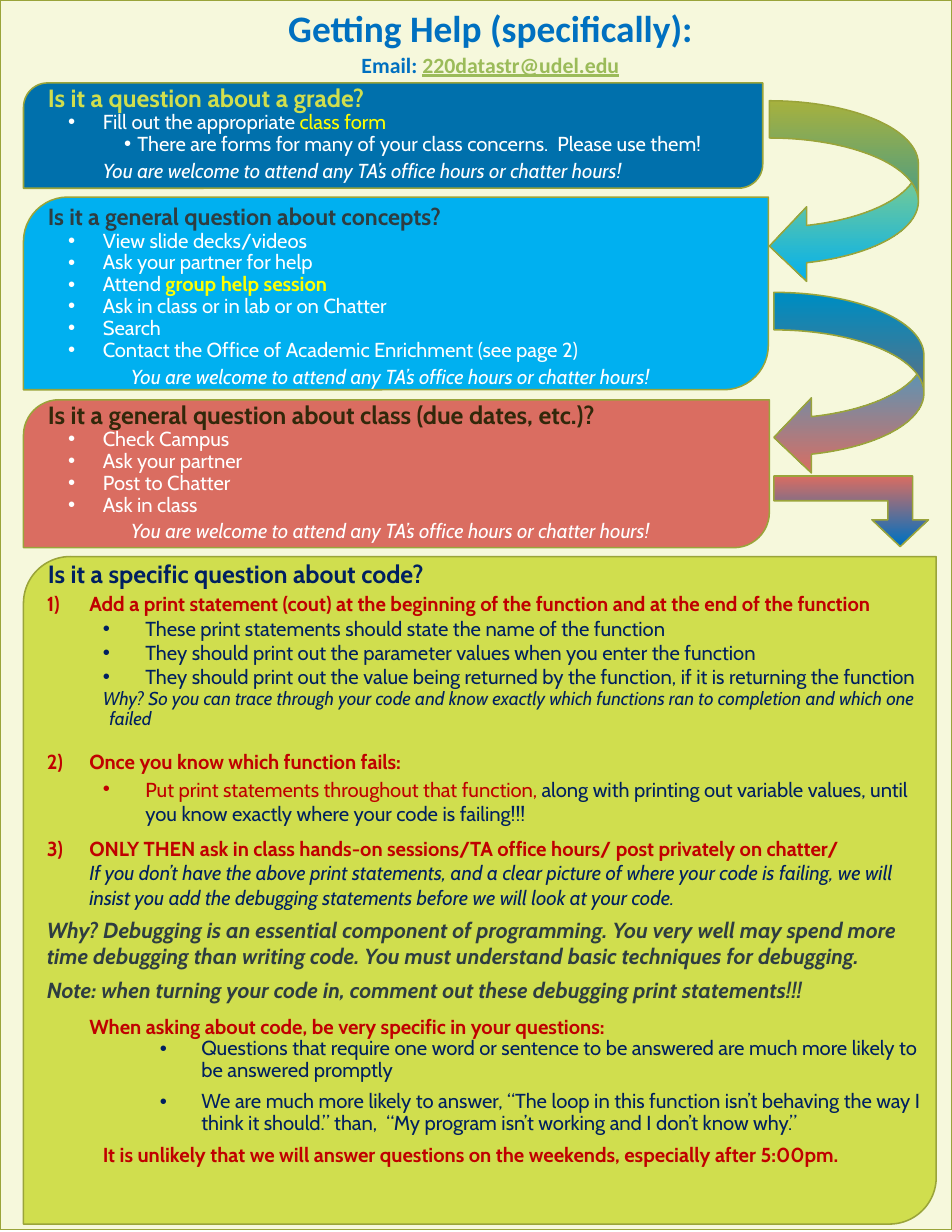
from dataclasses import dataclass
from typing import NamedTuple, Optional

from lxml import etree
from pptx import Presentation
from pptx import util as u
from pptx.dml.color import RGBColor
from pptx.enum import shapes, text
from pptx.oxml.ns import qn


@dataclass(frozen=True)
class Theme:
    title_font: str = "Calibri"
    body_font: str = "Cabin"
    title_size: int = 24
    heading: int = 16
    subheading: int = 15
    emphasis: int = 14
    body: int = 13
    aside: int = 12
    page: str = "F6F8DC"
    outline: str = "9AA43A"
    title: str = "0070C0"
    email: str = "9BBB59"
    deep_blue: str = "0070AC"
    sky: str = "00B0F0"
    coral: str = "DA6D61"
    lime: str = "D0DE4E"
    white: str = "FFFFFF"
    yellow: str = "FFFF00"
    navy: str = "002060"
    red: str = "C00000"
    slate: str = "2E3D41"
    brown: str = "32280A"


class Area(NamedTuple):
    """Left, top, width and height in percent of the slide."""
    left: float
    top: float
    width: float
    height: float


class Panel(NamedTuple):
    area: Area
    corner: float
    color: str


class Arrow(NamedTuple):
    preset: shapes.MSO_SHAPE
    area: Area
    start: str
    end: str
    start_at: float = 0
    flipped: bool = False
    adjustments: tuple = ()


class Run(NamedTuple):
    words: str
    color: str
    size: int = 13
    bold: bool = False
    italic: bool = False
    underline: bool = False
    font: str = "Cabin"


class Para(NamedTuple):
    runs: list
    margin: float = 0.26
    indent: float = 0
    before: int = 0
    after: int = 0
    spacing: Optional[float] = None
    bullet: Optional[str] = None
    number: int = 0
    level: int = 0
    centered: bool = False


T = Theme()
prs = Presentation()
prs.slide_width, prs.slide_height = u.Inches(8.5), u.Inches(11)


def place(area: Area) -> tuple:
    width, height = prs.slide_width / 100, prs.slide_height / 100
    return (int(area.left * width), int(area.top * height),
            int(area.width * width), int(area.height * height))


def draw_shape(slide, preset, area: Area, adjustments: tuple = ()):
    shape = slide.shapes.add_shape(preset, *place(area))
    shape.shadow.inherit = False
    shape.line.color.rgb = RGBColor.from_string(T.outline)
    shape.line.width = u.Pt(1)
    for i, value in enumerate(adjustments):
        shape.adjustments[i] = value
    return shape


def fill_solid(shape, color: str) -> None:
    shape.fill.solid()
    shape.fill.fore_color.rgb = RGBColor.from_string(color)


def draw_arrow(slide, arrow: Arrow) -> None:
    shape = draw_shape(slide, arrow.preset, arrow.area, arrow.adjustments)
    shape.fill.gradient()
    shape.fill.gradient_angle = 270
    ends = ((arrow.start, arrow.start_at), (arrow.end, 1))
    for stop, (color, position) in zip(shape.fill.gradient_stops, ends):
        stop.color.rgb = RGBColor.from_string(color)
        stop.position = position
    if arrow.flipped:
        shape.element.spPr.find(qn("a:xfrm")).set("flipV", "1")


def write(paragraph, para: Para) -> None:
    props = paragraph._p.get_or_add_pPr()
    props.set("marL", str(u.Inches(para.margin)))
    props.set("indent", str(u.Inches(para.indent)))
    if para.bullet:
        etree.SubElement(props, qn("a:buFont"), typeface="Arial")
        etree.SubElement(props, qn("a:buChar"), char=para.bullet)
    elif para.number:
        etree.SubElement(props, qn("a:buAutoNum"), type="arabicParenR",
                         startAt=str(para.number))
    paragraph.level = para.level
    paragraph.alignment = text.PP_ALIGN.CENTER if para.centered else text.PP_ALIGN.LEFT
    if para.before:
        paragraph.space_before = u.Pt(para.before)
    if para.after:
        paragraph.space_after = u.Pt(para.after)
    if para.spacing:
        paragraph.line_spacing = para.spacing
    for part in para.runs:
        run = paragraph.add_run()
        run.text = part.words
        font = run.font
        font.name, font.size = part.font, u.Pt(part.size)
        font.bold, font.italic, font.underline = part.bold, part.italic, part.underline
        font.color.rgb = RGBColor.from_string(part.color)


def write_all(shape, paras: list) -> None:
    frame = shape.text_frame
    frame.word_wrap = True
    frame.auto_size = text.MSO_AUTO_SIZE.NONE
    frame.vertical_anchor = text.MSO_ANCHOR.TOP
    for i, para in enumerate(paras):
        write(frame.add_paragraph() if i else frame.paragraphs[0], para)


# Paragraph kinds
def heading(words: str, color: str, before: int, size: int = T.heading) -> Para:
    return Para([Run(words, color, size, bold=True)], before=before)


def item(*runs: Run) -> Para:
    return Para(list(runs), 0.75, -0.31, spacing=0.9, bullet="•")


def items(*lines: str) -> list:
    return [item(Run(line, T.white)) for line in lines]


def welcome(margin: float) -> Para:
    words = "You are welcome to attend any TA’s office hours or chatter hours!"
    return Para([Run(words, T.white, italic=True)], margin, before=3, spacing=0.9)


def step(number: int, words: str, before: int = 7) -> Para:
    return Para([Run(words, T.red, bold=True)], 0.63, -0.38, before, number=number)


def detail(*runs: Run, before: int = 0) -> Para:
    return Para(list(runs), 1.13, -0.38, before, bullet="•", level=1)


def advice(words: str) -> Para:
    return Para([Run(words, T.navy)], 1.63, -0.37, after=6, spacing=0.9, bullet="•", level=3)


def note(words: str) -> Para:
    return Para([Run(words, T.slate, T.emphasis, True, True)], 0.25, before=5)


PANELS = [
    Panel(Area(2.47, 16, 78.24, 15.64), 0.23, T.sky),
    Panel(Area(2.47, 32.45, 78.35, 12), 0.24, T.coral),
    Panel(Area(2.47, 6.73, 77.65, 8.55), 0.23, T.deep_blue),
    Panel(Area(2.47, 45.18, 95.88, 54.18), 0.07, T.lime),
]
CURVED, BENT = shapes.MSO_SHAPE.CURVED_LEFT_ARROW, shapes.MSO_SHAPE.BENT_UP_ARROW
ARROWS = [
    Arrow(CURVED, Area(80.82, 8.18, 15.65, 14.82), T.lime, T.sky),
    Arrow(CURVED, Area(81.29, 23.73, 15.76, 14.82), T.sky, T.coral, 0.03),
    Arrow(BENT, Area(81.29, 38.64, 16.24, 5.73), T.title, T.coral, 0.03, True, (0.35, 0.4, 0.38)),
]
TITLE = Para([Run("Getting Help (specifically):", T.title, T.title_size, True,
                  font=T.title_font)], centered=True)
GUIDE = [
    Para([Run("Email: ", T.title, T.emphasis, True, font=T.title_font),
          Run("220datastr@udel.edu", T.email, T.emphasis, True, underline=True,
              font=T.title_font)], centered=True),
    # Grades
    heading("Is it a question about a grade?", T.lime, 3),
    item(Run("Fill out the appropriate ", T.white), Run("class form", T.yellow)),
    Para([Run("There are forms for many of your class concerns.  Please use them!", T.white)],
         1.06, -0.12, spacing=0.9, bullet="•", level=1),
    welcome(0.75),
    # Concepts
    heading("Is it a general question about concepts?", T.slate, 13, T.subheading),
    *items("View slide decks/videos", "Ask your partner for help"),
    item(Run("Attend ", T.white), Run("group help session", T.yellow, bold=True)),
    *items("Ask in class or in lab or on Chatter", "Search",
           "Contact the Office of Academic Enrichment (see page 2)"),
    welcome(1),
    # Class
    heading("Is it a general question about class (due dates, etc.)?", T.brown, 7),
    *items("Check Campus", "Ask your partner", "Post to Chatter", "Ask in class"),
    welcome(1),
    # Code
    heading("Is it a specific question about code?", T.navy, 10),
    step(1, "Add a print statement (cout) at the beginning of the function and at the end of the function", 2),
    *[detail(Run(line, T.navy)) for line in (
        "These print statements should state the name of the function",
        "They should print out the parameter values when you enter the function",
        "They should print out the value being returned by the function, if it is returning the function")],
    Para([Run("Why? So you can trace through your code and know exactly which functions ran to completion and which one failed",
              T.navy, T.aside, italic=True)], 0.81, -0.06, after=6, spacing=0.9, level=3),
    step(2, "Once you know which function fails:"),
    detail(Run("Put print statements throughout that function, ", T.red),
           Run("along with printing out variable values, until you know exactly where your code is failing!!!", T.navy),
           before=2),
    step(3, "ONLY THEN ask in class hands-on sessions/TA office hours/ post privately on chatter/"),
    Para([Run("If you don’t have the above print statements, and a clear picture of where your code is failing, we will insist you add the debugging statements before we will look at your code.",
              T.navy, italic=True)], 0.63),
    note("Why? Debugging is an essential component of programming. You very well may spend more time debugging than writing code. You must understand basic techniques for debugging."),
    note("Note: when turning your code in, comment out these debugging print statements!!!"),
    Para([Run("When asking about code, be very specific in your questions:", T.red, bold=True)],
         0.63, before=7),
    advice("Questions that require one word or sentence to be answered are much more likely to be answered promptly"),
    advice("We are much more likely to answer, “The loop in this function isn’t behaving the way I think it should.” than,  “My program isn’t working and I don’t know why.”"),
    Para([Run("It is unlikely that we will answer questions on the weekends, especially after 5:00pm.",
              T.red, bold=True)], 0.75, after=6, spacing=0.9, level=2),
]


def main() -> None:
    slide = prs.slides.add_slide(prs.slide_layouts[5])
    # Page and panels
    fill_solid(draw_shape(slide, shapes.MSO_SHAPE.RECTANGLE, Area(0, 0, 100, 99.82)), T.page)
    for panel in PANELS:
        preset = shapes.MSO_SHAPE.ROUND_2_DIAG_RECTANGLE
        fill_solid(draw_shape(slide, preset, panel.area, (panel.corner, 0)), panel.color)
    # Title, raised above the page
    title = slide.shapes.title
    title.left, title.top, title.width, title.height = place(Area(0.82, 0, 98.35, 4.18))
    slide.shapes.element.append(title.element)
    write_all(title, [TITLE])
    # Guide text and arrows
    write_all(slide.shapes.add_textbox(*place(Area(0.82, 3.73, 98.35, 96.27))), GUIDE)
    for arrow in ARROWS:
        draw_arrow(slide, arrow)
    prs.save("out.pptx")


if __name__ == "__main__":
    main()
